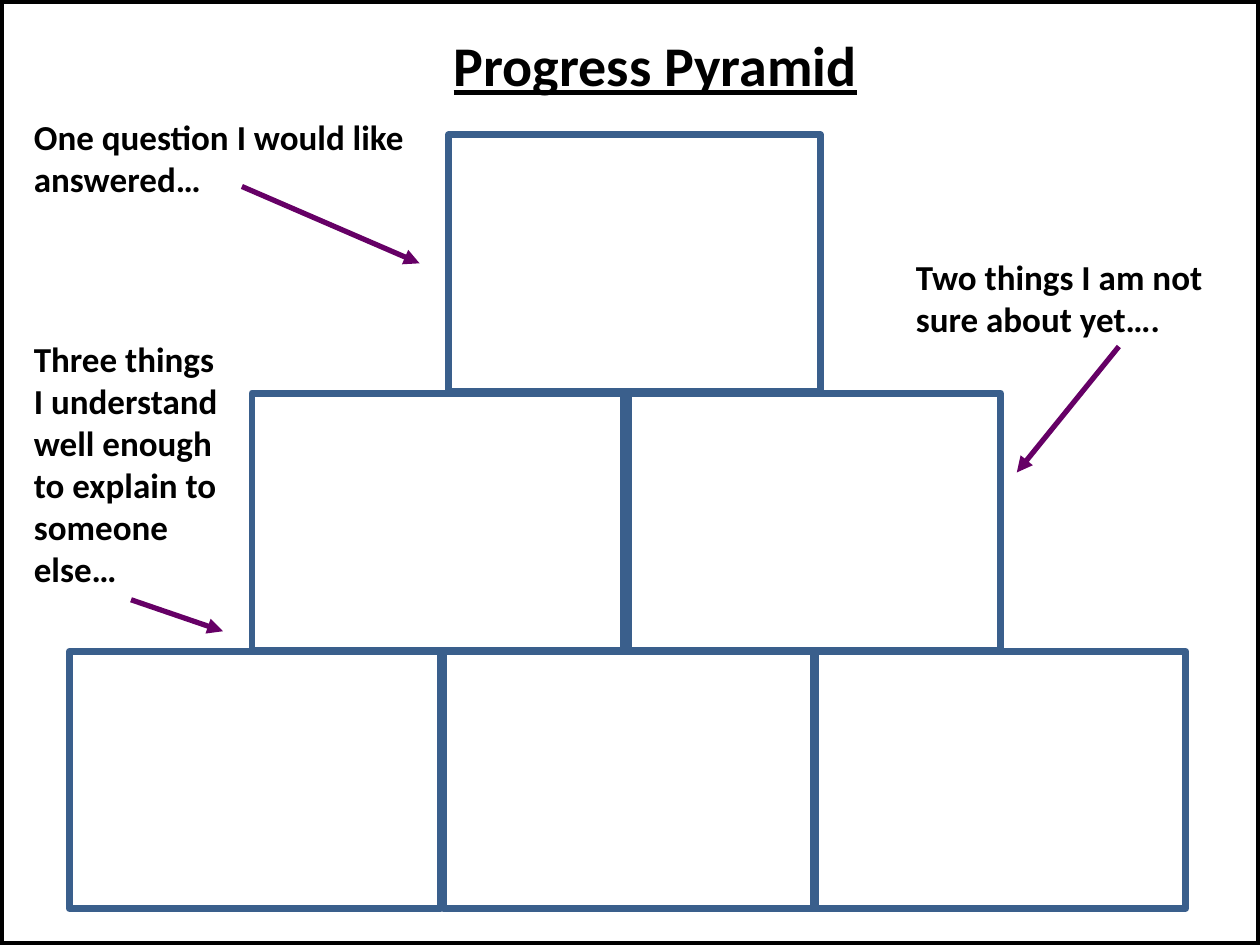
from lxml import etree
from pptx import Presentation
from pptx.dml.color import RGBColor
from pptx.enum import shapes, text
from pptx.oxml.ns import qn
from pptx.util import Inches, Pt

HUES = {"ink": "000000", "box": "3A5F8C", "arrow": "660066"}


def style(font, size):
    font.name, font.size, font.bold = "Calibri", Pt(size), True
    font.color.rgb = RGBColor.from_string(HUES["ink"])


def outline(place, hue, width):
    """Add an unfilled rectangle at place, in inches."""
    box = slide.shapes.add_shape(shapes.MSO_SHAPE.RECTANGLE, *map(Inches, place))
    box.shadow.inherit = False
    box.fill.background()
    box.line.color.rgb = RGBColor.from_string(HUES[hue])
    box.line.width = Pt(width)


deck = Presentation()
deck.slide_width, deck.slide_height = Inches(10), Inches(7.5)
slide = deck.slides.add_slide(deck.slide_layouts[5])

# Title
title = slide.shapes.title
title.left, title.top = Inches(2.87), Inches(0.19)
title.width, title.height = Inches(4.66), Inches(0.64)
title.text_frame.text = "Progress Pyramid"
head = title.text_frame.paragraphs[0]
head.alignment = text.PP_ALIGN.CENTER
style(head.font, 32)
head.font.underline = True

# Prompts, each with an arrow to its row
prompts = [
    ("One question I would like answered…", (0.17, 0.87, 3.21, 0.77), (1.92, 1.48, 3.33, 2.09)),
    ("Two things I am not sure about yet….", (7.17, 1.98, 2.64, 0.77), (8.88, 2.75, 8.07, 3.75)),
    ("Three things I understand well enough to explain to someone else…",
     (0.17, 2.63, 1.68, 2.12), (1.04, 4.76, 1.77, 5.01)),
]
for words, place, ends in prompts:
    arrow = slide.shapes.add_connector(shapes.MSO_CONNECTOR.STRAIGHT, *map(Inches, ends))
    arrow.line.color.rgb = RGBColor.from_string(HUES["arrow"])
    arrow.line.width = Pt(3)
    etree.SubElement(arrow.line._get_or_add_ln(), qn("a:tailEnd"), type="triangle")
    etree.SubElement(arrow._element.spPr, qn("a:effectLst"))

    note = slide.shapes.add_textbox(*map(Inches, place)).text_frame
    note.word_wrap = True
    note.text = words
    style(note.paragraphs[0].font, 20)

# Pyramid, from the bottom row up
wide, high = 2.95, 2.04
rows = [(5.17, (0.55, 3.52, 6.46)), (3.12, (2, 4.99)), (1.07, (3.56,))]
for top, lefts in rows:
    for left in lefts:
        outline((left, top, wide, high), "box", 4)

# Slide frame
outline((0, 0, 10, 7.5), "ink", 5)

deck.save("out.pptx")
